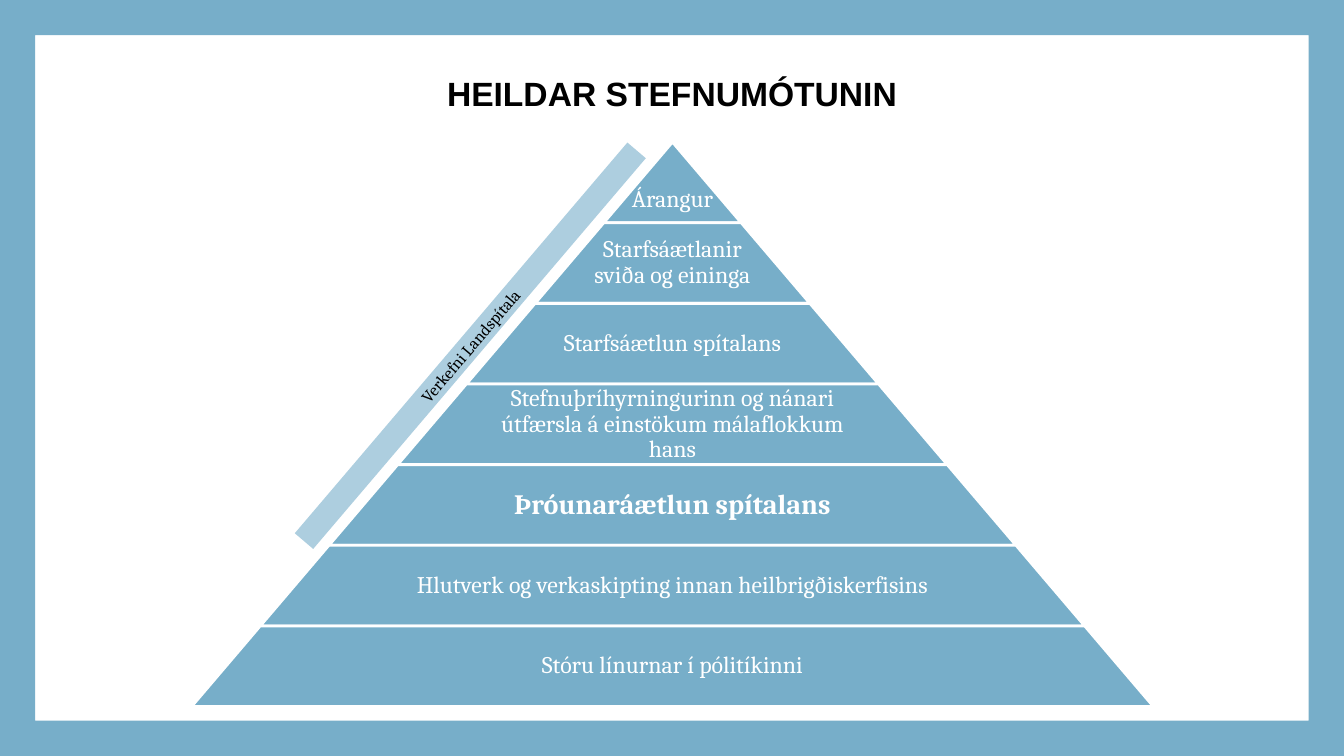
import pptx
import pptx.util
import pptx.dml.color
import pptx.enum.shapes
import pptx.enum.text

Inches = pptx.util.Inches
Shape = pptx.enum.shapes.MSO_SHAPE
Anchor = pptx.enum.text.MSO_ANCHOR

TITLE = "HEILDAR STEFNUMÓTUNIN"
LEVELS = [
    {"text": "Árangur", "text_share": 1, "top_inset": 0.37},
    {"text": "Starfsáætlanir sviða og eininga"},
    {"text": "Starfsáætlun spítalans"},
    {"text": "Stefnuþríhyrningurinn og nánari útfærsla á einstökum málaflokkum hans"},
    {"text": "Þróunaráætlun spítalans", "size": 20, "bold": True},
    {"text": "Hlutverk og verkaskipting innan heilbrigðiskerfisins"},
    {"text": "Stóru línurnar í pólitíkinni"},
]
PROJECTS = "Verkefni Landspítala"

BLUE, PALE_BLUE, WHITE, BLACK = "77AEC9", "ADCEDF", "FFFFFF", "000000"
SLIDE_WIDTH, SLIDE_HEIGHT = 13.33, 7.5
FRAME_WIDTH = 0.35
APEX_X, APEX_Y = 6.67, 1.41
LEVEL_HEIGHT = 0.8
BASE_WIDTH = 9.54
TEXT_SHARE = 0.65


def paint(color_format, color):
    color_format.rgb = pptx.dml.color.RGBColor.from_string(color)


def write(holder, text, size=17, font="Cambria", color=WHITE, bold=False,
          anchor=Anchor.MIDDLE, inset=0.02, top_inset=None, spacing=0.9):
    frame = holder.text_frame
    frame.word_wrap = True
    frame.auto_size = pptx.enum.text.MSO_AUTO_SIZE.NONE
    frame.vertical_anchor = anchor
    frame.margin_left = frame.margin_right = frame.margin_bottom = Inches(inset)
    frame.margin_top = Inches(inset if top_inset is None else top_inset)
    paragraph = frame.paragraphs[0]
    paragraph.alignment = pptx.enum.text.PP_ALIGN.CENTER
    paragraph.line_spacing = spacing
    run = paragraph.add_run()
    run.text = text
    run.font.name = font
    run.font.size = pptx.util.Pt(size)
    run.font.bold = bold
    paint(run.font.color, color)


def add_filled(shapes, kind, left, top, width, height, fill, outline=None):
    shape = shapes.add_shape(kind, Inches(left), Inches(top), Inches(width), Inches(height))
    shape.shadow.inherit = False
    shape.fill.solid()
    paint(shape.fill.fore_color, fill)
    if outline:
        shape.line.width = pptx.util.Pt(2)
        paint(shape.line.color, outline)
    else:
        shape.line.fill.background()
    return shape


def add_level(pyramid, index, text, text_share=TEXT_SHARE, **text_format):
    width = BASE_WIDTH * (index + 1) / len(LEVELS)
    top = APEX_Y + index * LEVEL_HEIGHT
    band = add_filled(pyramid.shapes, Shape.TRAPEZOID, APEX_X - width / 2, top,
                      width, LEVEL_HEIGHT, BLUE, WHITE)
    band.adjustments[0] = BASE_WIDTH / len(LEVELS) / 2 / LEVEL_HEIGHT
    text_width = width * text_share
    label = pyramid.shapes.add_textbox(Inches(APEX_X - text_width / 2), Inches(top),
                                       Inches(text_width), Inches(LEVEL_HEIGHT))
    write(label, text, **text_format)


def main():
    deck = pptx.Presentation()
    deck.slide_width, deck.slide_height = Inches(SLIDE_WIDTH), Inches(SLIDE_HEIGHT)
    slide = deck.slides.add_slide(deck.slide_layouts[5])

    border = add_filled(slide.shapes, Shape.FRAME, 0, 0, SLIDE_WIDTH, SLIDE_HEIGHT, BLUE)
    border.adjustments[0] = FRAME_WIDTH / SLIDE_HEIGHT

    title = slide.shapes.title
    title.left, title.top = Inches(1.9), Inches(0.72)
    title.width, title.height = Inches(9.53), Inches(0.41)
    write(title, TITLE, size=24, font="Arial", color=BLACK, bold=True,
          anchor=Anchor.BOTTOM, inset=0)

    pyramid = slide.shapes.add_group_shape()
    for index, level in enumerate(LEVELS):
        add_level(pyramid, index, **level)

    projects = add_filled(slide.shapes, Shape.RECTANGLE, 2.12, 3.31, 5.09, 0.24, PALE_BLUE)
    projects.rotation = 310.4
    write(projects, PROJECTS, size=12, color=BLACK, inset=0.05, spacing=1.0)

    deck.save("out.pptx")


if __name__ == "__main__":
    main()
